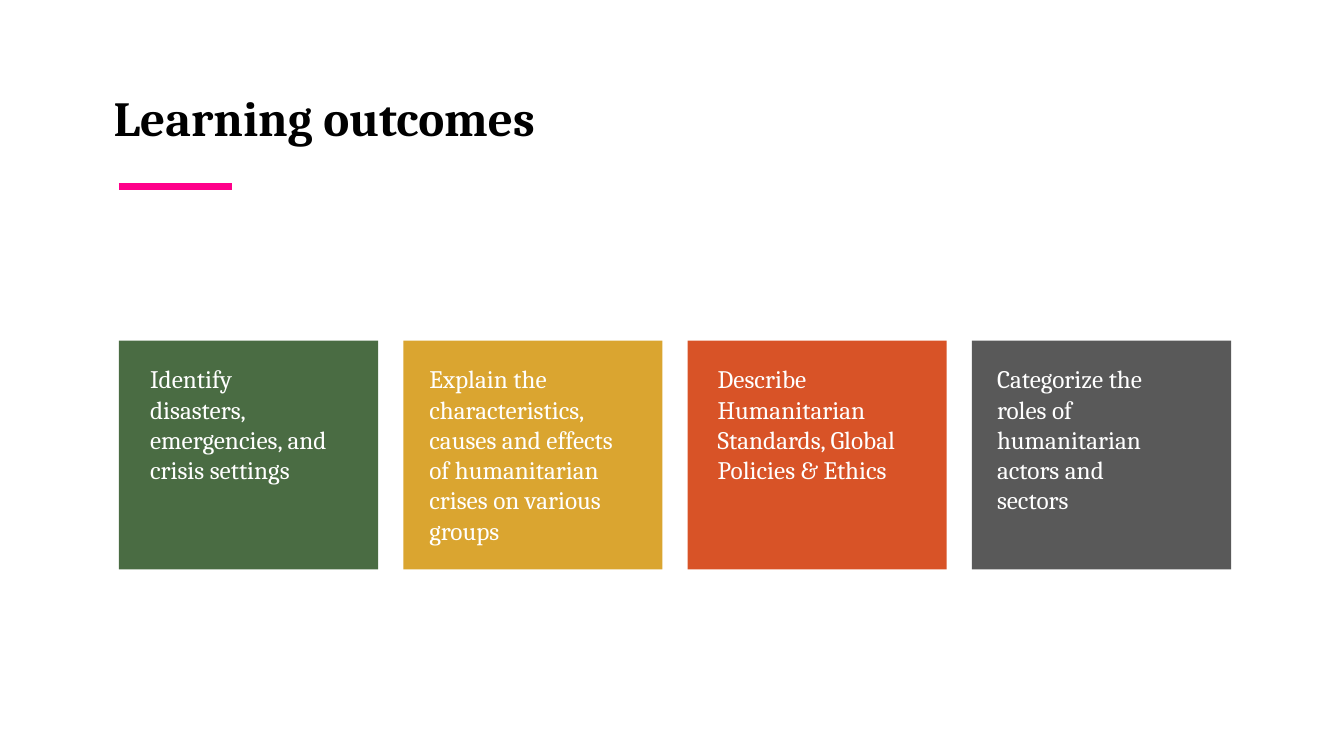
from dataclasses import dataclass

from lxml import etree
from pptx import Presentation
from pptx.dml.color import RGBColor
from pptx.enum.shapes import MSO_CONNECTOR, MSO_SHAPE
from pptx.enum.text import MSO_AUTO_SIZE
from pptx.oxml.ns import qn
from pptx.util import Inches, Pt

RECTANGLE = MSO_SHAPE.RECTANGLE
STRAIGHT = MSO_CONNECTOR.STRAIGHT
GROW_TO_TEXT = MSO_AUTO_SIZE.SHAPE_TO_FIT_TEXT


@dataclass(frozen=True)
class Theme:
    font: str = "Cambria"
    title_size: float = 35
    outcome_size: float = 18
    accent_width: float = 4.5
    black: str = "000000"
    white: str = "FFFFFF"
    pink: str = "FF008A"
    green: str = "4A6C43"
    gold: str = "DAA530"
    orange: str = "D85327"
    grey: str = "595959"


THEME = Theme()

CARD_LEFT, CARD_TOP = 1.18, 3.38
CARD_WIDTH, CARD_HEIGHT = 2.57, 2.27
CARD_PITCH = 2.82
OUTCOME_TOP = 3.56

OUTCOMES = [
    ("Identify disasters, emergencies, and crisis settings",
     THEME.green, 0.21, 1.96, 1.62),
    ("Explain the characteristics, causes and effects of humanitarian "
     "crises on various groups", THEME.gold, 0.16, 2.21, 1.92),
    ("Describe Humanitarian Standards, Global Policies & Ethics",
     THEME.orange, 0.2, 2.11, 1.62),
    ("Categorize the roles of humanitarian actors and sectors",
     THEME.grey, 0.15, 1.99, 1.62),
]


def add_text(slide, text, left, top, width, height, size, color, bold=False):
    label = slide.shapes.add_textbox(
        Inches(left), Inches(top), Inches(width), Inches(height))
    frame = label.text_frame
    frame.word_wrap = True
    frame.auto_size = GROW_TO_TEXT
    frame.text = text
    font = frame.paragraphs[0].runs[0].font
    font.name = THEME.font
    font.size = Pt(size)
    font.bold = bold
    font.color.rgb = RGBColor.from_string(color)


def add_card(slide, left, color):
    card = slide.shapes.add_shape(
        RECTANGLE, Inches(left), Inches(CARD_TOP),
        Inches(CARD_WIDTH), Inches(CARD_HEIGHT))
    card.shadow.inherit = False
    card.fill.solid()
    card.fill.fore_color.rgb = RGBColor.from_string(color)
    card.line.fill.background()


def add_accent_line(slide, left, right, y):
    accent = slide.shapes.add_connector(
        STRAIGHT, Inches(left), Inches(y), Inches(right), Inches(y))
    accent.line.color.rgb = RGBColor.from_string(THEME.pink)
    accent.line.width = Pt(THEME.accent_width)
    etree.SubElement(accent._element.spPr, qn("a:effectLst"))


def main():
    deck = Presentation()
    deck.slide_width = Inches(13.33)
    deck.slide_height = Inches(7.5)
    slide = deck.slides.add_slide(deck.slide_layouts[6])

    add_text(slide, "Learning outcomes", 1.03, 0.82, 6.67, 0.69,
             THEME.title_size, THEME.black, bold=True)
    add_accent_line(slide, CARD_LEFT, 2.3, 1.85)
    for index, (outcome, color, inset, width, height) in enumerate(OUTCOMES):
        left = CARD_LEFT + index * CARD_PITCH
        add_card(slide, left, color)
        add_text(slide, outcome, left + inset, OUTCOME_TOP, width, height,
                 THEME.outcome_size, THEME.white)

    deck.save("out.pptx")


if __name__ == "__main__":
    main()
